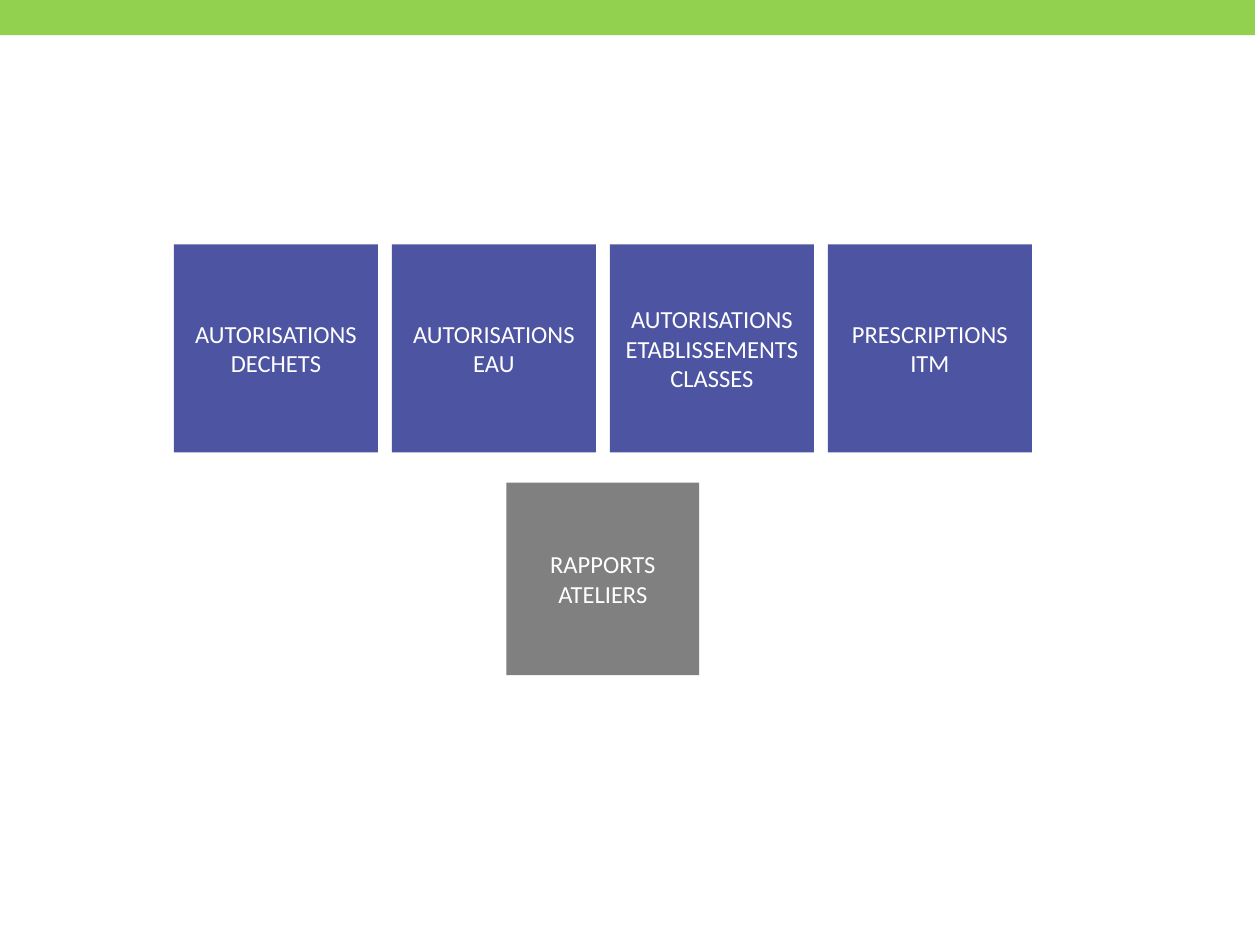
"""Build a slide with a row of four permit boxes above a box for workshop reports."""
from pptx import Presentation
from pptx.dml.color import RGBColor as RGB
from pptx.enum.shapes import MSO_SHAPE as Shape
from pptx.enum.text import MSO_ANCHOR as Anchor, PP_ALIGN as Align
from pptx.util import Inches, Pt

COLORS = {"band": "92D050", "permit": "4D54A1", "report": "808080", "text": "FFFFFF"}


def add_box(text, left, top, width, height, fill, size=14, font="Calibri"):
    box = slide.shapes.add_shape(
        Shape.RECTANGLE, Inches(left), Inches(top), Inches(width), Inches(height)
    )
    box.shadow.inherit = False
    box.fill.solid()
    box.fill.fore_color.rgb = RGB.from_string(COLORS[fill])
    box.line.fill.background()
    if text:
        frame = box.text_frame
        frame.word_wrap = True
        frame.vertical_anchor = Anchor.MIDDLE
        para = frame.paragraphs[0]
        para.alignment = Align.CENTER
        run = para.add_run()
        run.text = text
        run.font.name = font
        run.font.size = Pt(size)
        run.font.color.rgb = RGB.from_string(COLORS["text"])


deck = Presentation()
deck.slide_width, deck.slide_height = Inches(10), Inches(7.5)
slide = deck.slides.add_slide(deck.slide_layouts[6])

add_box("", 0, 0, 9.96, 0.28, fill="band")

permits = [
    "AUTORISATIONS DECHETS",
    "AUTORISATIONS EAU",
    "AUTORISATIONS ETABLISSEMENTS CLASSES",
    "PRESCRIPTIONS ITM",
]
left, step = 1.38, 1.73
for col, label in enumerate(permits):
    add_box(label, left + col * step, 1.94, 1.62, 1.65, fill="permit")

add_box("RAPPORTS ATELIERS", 4.02, 3.83, 1.53, 1.53, fill="report")

deck.save("out.pptx")
